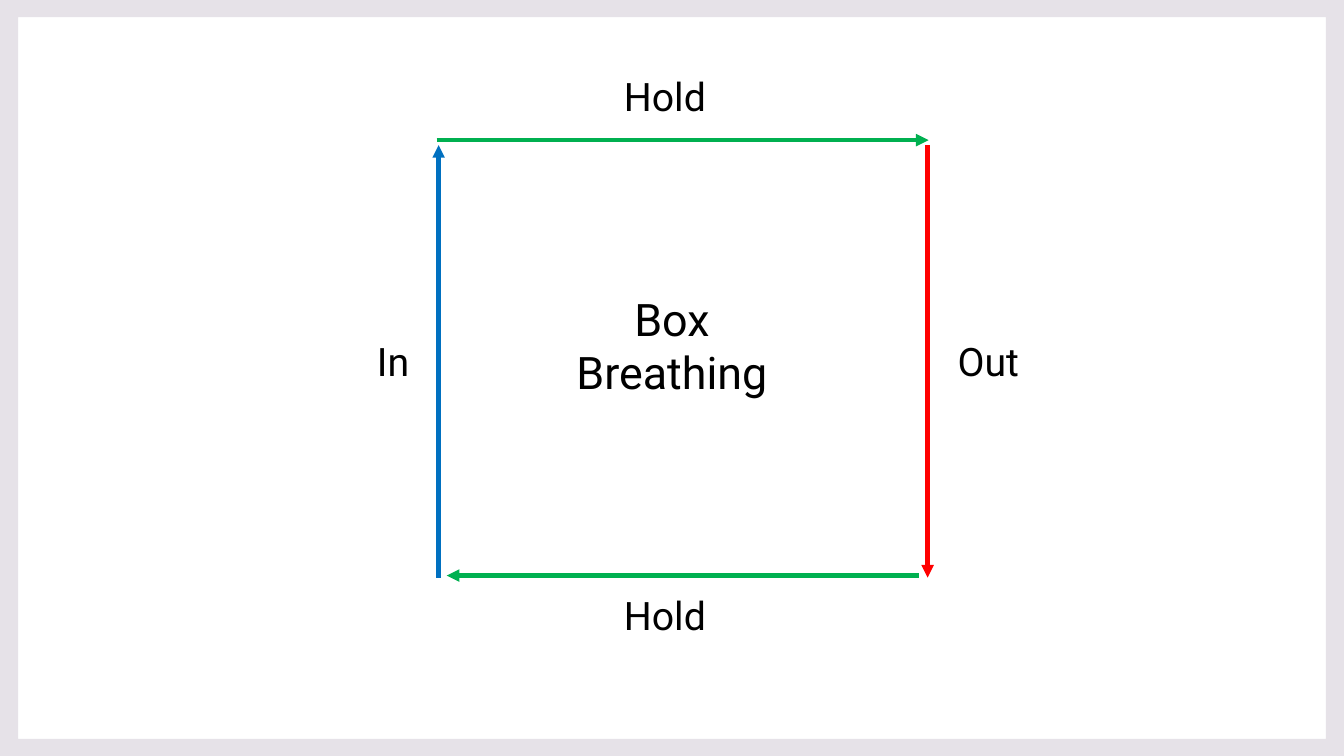
import dataclasses

import lxml.etree
import pptx
import pptx.dml.color
import pptx.enum.shapes
import pptx.enum.text
import pptx.oxml.ns
import pptx.util


@dataclasses.dataclass(frozen=True)
class Theme:
    """Colours, font and type sizes of the slide."""

    font: str = "Roboto"
    title_size: int = 32
    label_size: int = 28
    line_width: int = 3
    text: str = "000000"
    frame: str = "E6E2E8"
    inhale: str = "0070C0"
    exhale: str = "FF0000"
    hold: str = "00B050"


class SlideBuilder:
    """Draws styled elements on one slide, measured in px of 1/100 inch."""

    scale = pptx.util.Inches(1) // 100

    def __init__(self, deck, theme):
        """Add a title-only slide to the deck."""
        self.theme = theme
        self.page = deck.slides.add_slide(deck.slide_layouts[5])

    def emu(self, *lengths):
        """Turn px lengths into EMU."""
        return [length * self.scale for length in lengths]

    def colour(self, value):
        """Return the colour object for a hex value."""
        return pptx.dml.color.RGBColor.from_string(value)

    def set_text(self, box, text, size, align):
        """Fill a box with one styled paragraph."""
        frame = box.text_frame
        frame.word_wrap = True
        frame.auto_size = pptx.enum.text.MSO_AUTO_SIZE.SHAPE_TO_FIT_TEXT
        frame.vertical_anchor = pptx.enum.text.MSO_ANCHOR.TOP
        para = frame.paragraphs[0]
        para.alignment = align
        span = para.add_run()
        span.text = text
        span.font.name = self.theme.font
        span.font.size = pptx.util.Pt(size)
        span.font.color.rgb = self.colour(self.theme.text)

    def title(self, text, left, top, width, height):
        """Place and fill the title placeholder."""
        box = self.page.shapes.title
        box.left, box.top, box.width, box.height = self.emu(left, top, width, height)
        self.set_text(box, text, self.theme.title_size, pptx.enum.text.PP_ALIGN.CENTER)

    def label(self, text, left, top, width, height):
        """Add a left-aligned label."""
        box = self.page.shapes.add_textbox(*self.emu(left, top, width, height))
        self.set_text(box, text, self.theme.label_size, pptx.enum.text.PP_ALIGN.LEFT)

    def border(self, width, height, side, top):
        """Add a border around the slide with an open middle."""
        right, bottom = width - side, height - top
        builder = self.page.shapes.build_freeform(side, top, scale=self.scale)
        builder.add_line_segments([(side, bottom), (right, bottom), (right, top)])
        builder.move_to(0, 0)
        builder.add_line_segments([(width, 0), (width, height), (0, height)])
        shape = builder.convert_to_shape()
        shape.shadow.inherit = False
        shape.fill.solid()
        shape.fill.fore_color.rgb = self.colour(self.theme.frame)
        shape.line.fill.background()

    def arrow(self, colour, *ends):
        """Add a straight arrow from its first point to its second."""
        kind = pptx.enum.shapes.MSO_CONNECTOR.STRAIGHT
        arrow = self.page.shapes.add_connector(kind, *self.emu(*ends))
        arrow.line.width = pptx.util.Pt(self.theme.line_width)
        arrow.line.color.rgb = self.colour(colour)
        name = pptx.oxml.ns.qn
        properties = arrow.element.spPr
        line = properties.find(name("a:ln"))
        lxml.etree.SubElement(line, name("a:tailEnd"), type="triangle")
        lxml.etree.SubElement(properties, name("a:effectLst"))


def main():
    """Build the box breathing slide."""
    width, height = 1333, 750
    theme = Theme()
    deck = pptx.Presentation()
    deck.slide_width = width * SlideBuilder.scale
    deck.slide_height = height * SlideBuilder.scale
    slide = SlideBuilder(deck, theme)
    slide.border(width, height, 18, 17)

    slide.arrow(theme.inhale, 435, 573, 435, 144)
    slide.arrow(theme.exhale, 920, 144, 920, 573)
    slide.arrow(theme.hold, 433, 139, 921, 139)
    slide.arrow(theme.hold, 911, 571, 443, 571)

    slide.title("Box Breathing", 560, 284, 213, 118)
    for text, left, top, label_width in (
        ("In", 364, 330, 62),
        ("Hold", 609, 67, 115),
        ("Out", 940, 330, 107),
        ("Hold", 609, 582, 115),
    ):
        slide.label(text, left, top, label_width, 57)
    deck.save("out.pptx")


if __name__ == "__main__":
    main()
